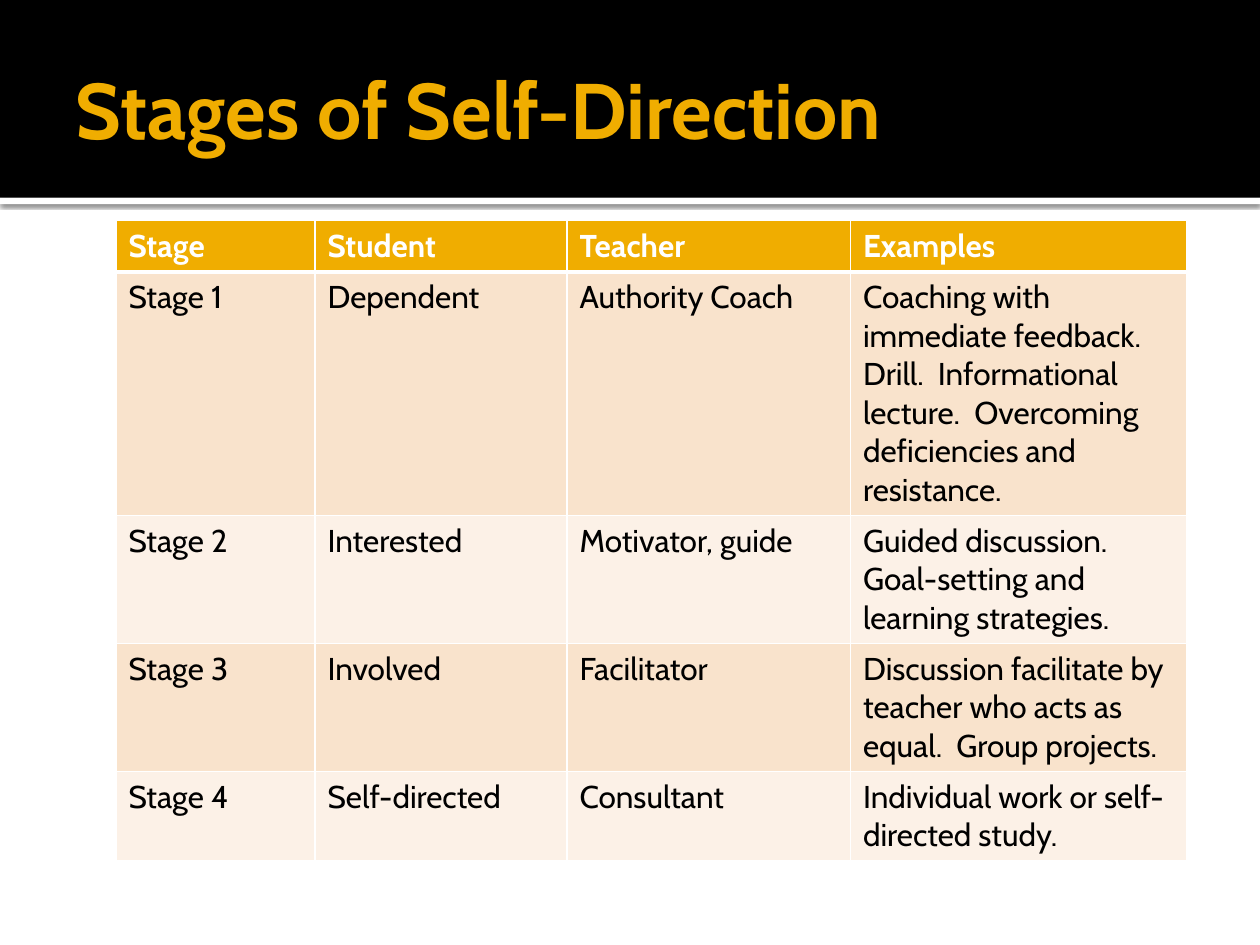
from lxml import etree
from pptx import Presentation
from pptx.dml.color import RGBColor
from pptx.enum import shapes, text
from pptx.oxml import ns, parse_xml
from pptx.util import Inches, Pt

FONT = "Cabin"
GOLD, WHITE, BLACK = "F0AD00", "FFFFFF", "000000"
ROW_FILLS = ("F9E3CC", "FCF1E7")
COLUMN_WIDTHS = (1.58, 2, 2.25, 2.67)
ROW_HEIGHT = 0.41
STAGES = (
    ("Stage", "Student", "Teacher", "Examples"),
    ("Stage 1", "Dependent", "Authority Coach",
     "Coaching with immediate feedback.  Drill.  Informational lecture.  "
     "Overcoming deficiencies and resistance."),
    ("Stage 2", "Interested", "Motivator, guide",
     "Guided discussion.  Goal-setting and learning strategies."),
    ("Stage 3", "Involved", "Facilitator",
     "Discussion facilitate by teacher who acts as equal.  Group projects."),
    ("Stage 4", "Self-directed", "Consultant",
     "Individual work or self-directed study."),
)


def color(hex_code):
    """Return the colour for a hex string."""
    return RGBColor.from_string(hex_code)


def write(frame, words, size=18, ink=BLACK, bold=False):
    """Put formatted, left-aligned words in a text frame."""
    paragraph = frame.paragraphs[0]
    paragraph.alignment = text.PP_ALIGN.LEFT
    run = paragraph.add_run()
    run.text = words
    run.font.name = FONT
    run.font.size = Pt(size)
    run.font.bold = bold
    run.font.color.rgb = color(ink)


def add_band(slide, top, height, fill):
    """Add a full-width band without an outline and return it."""
    band = slide.shapes.add_shape(
        shapes.MSO_SHAPE.RECTANGLE, 0, Inches(top), Inches(10), Inches(height))
    band.shadow.inherit = False
    band.fill.solid()
    band.fill.fore_color.rgb = color(fill)
    band.line.fill.background()
    return band


def cast_shadow(band, blur, distance, opacity):
    """Give a band a black shadow falling straight down."""
    effects = band._element.spPr.find(ns.qn("a:effectLst"))
    effects.append(parse_xml(
        f'<a:outerShdw {ns.nsdecls("a")} blurRad="{Pt(blur)}" '
        f'dist="{Pt(distance)}" dir="5400000" algn="t" rotWithShape="0">'
        f'<a:srgbClr val="{BLACK}"><a:alpha val="{opacity * 1000}"/>'
        '</a:srgbClr></a:outerShdw>'))


def set_title(slide, words):
    """Format the title placeholder and bring it in front of the bands."""
    title = slide.shapes.title
    title.left, title.top = Inches(0.5), Inches(0.17)
    title.width, title.height = Inches(9), Inches(1.37)
    frame = title.text_frame
    frame.word_wrap = True
    frame.auto_size = text.MSO_AUTO_SIZE.NONE
    frame.vertical_anchor = text.MSO_ANCHOR.MIDDLE
    frame.margin_left = Inches(0.1)
    frame.margin_right = frame.margin_top = frame.margin_bottom = Inches(0.05)
    write(frame, words, size=45, ink=GOLD, bold=True)
    title._element.getparent().append(title._element)


def set_borders(cell, **widths):
    """Draw white borders, with widths in points by side."""
    properties = cell._tc.get_or_add_tcPr()
    for side in "LRTB":
        line = etree.SubElement(
            properties, ns.qn(f"a:ln{side}"), w=str(Pt(widths.get(side, 1))))
        fill = etree.SubElement(line, ns.qn("a:solidFill"))
        etree.SubElement(fill, ns.qn("a:srgbClr"), val=WHITE)


def add_stage_table(slide):
    """Add the table of stages with a gold header and banded rows."""
    holder = slide.shapes.add_table(
        len(STAGES), len(COLUMN_WIDTHS), Inches(0.92), Inches(1.75),
        Inches(sum(COLUMN_WIDTHS)), Inches(ROW_HEIGHT * len(STAGES)))
    table = holder.table
    for column, width in zip(table.columns, COLUMN_WIDTHS):
        column.width = Inches(width)
    for index, (row, entries) in enumerate(zip(table.rows, STAGES)):
        row.height = Inches(ROW_HEIGHT)
        header = index == 0
        for cell, entry in zip(row.cells, entries):
            set_borders(cell, T=3 if index == 1 else 1, B=3 if header else 1)
            cell.fill.solid()
            cell.fill.fore_color.rgb = color(
                GOLD if header else ROW_FILLS[(index - 1) % 2])
            write(cell.text_frame, entry,
                  ink=WHITE if header else BLACK, bold=header)
    holder.height = Inches(5.01)


def main():
    """Build and save the slide."""
    deck = Presentation()
    deck.slide_width, deck.slide_height = Inches(10), Inches(7.5)
    slide = deck.slides.add_slide(deck.slide_layouts[5])
    rule = add_band(slide, 1.57, 0.05, WHITE)
    cast_shadow(rule, blur=2.5, distance=0.8, opacity=60)
    add_band(slide, 0, 1.57, BLACK)
    set_title(slide, "Stages of Self-Direction")
    add_stage_table(slide)
    deck.save("out.pptx")


if __name__ == "__main__":
    main()
